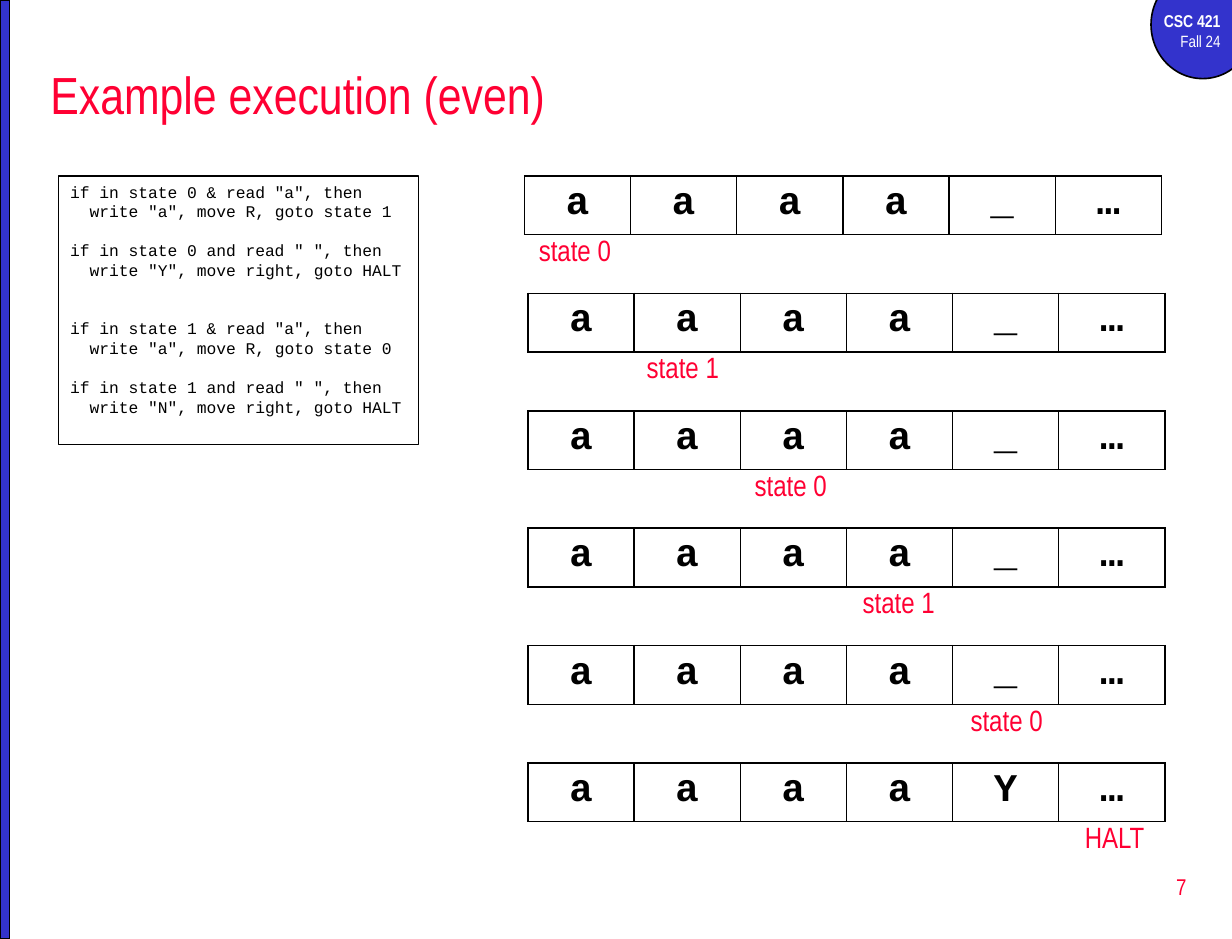
from dataclasses import dataclass
from lxml.etree import SubElement
from pptx import Presentation
from pptx.dml.color import RGBColor
from pptx.enum.shapes import MSO_SHAPE
from pptx.enum.text import MSO_ANCHOR, PP_ALIGN
from pptx.oxml.ns import qn
from pptx.util import Inches, Pt


@dataclass(frozen=True)
class Theme:
    blue: RGBColor = RGBColor(0x33, 0x33, 0xCC)
    red: RGBColor = RGBColor(0xFF, 0x00, 0x33)
    black: RGBColor = RGBColor(0, 0, 0)
    white: RGBColor = RGBColor(0xFF, 0xFF, 0xFF)
    sans: str = "Arial Narrow"
    mono: str = "Courier New"
    title: float = 32
    tape: float = 24
    state: float = 18
    number: float = 14
    course: float = 10.5
    small: float = 10


T = Theme()


def write(tf, text, size, color=T.red, font=T.sans, bold=False,
          align=PP_ALIGN.LEFT, first=True):
    """Fill the first paragraph of tf, or add one, and return it."""
    p = tf.paragraphs[0] if first else tf.add_paragraph()
    p.alignment = align
    r = p.add_run()
    r.text = text
    r.font.size, r.font.name, r.font.bold = Pt(size), font, bold
    r.font.color.rgb = color
    return p


def add_box(kind, x, y, w, h, fill=None, line=1):
    sp = s.shapes.add_shape(kind, Inches(x), Inches(y), Inches(w), Inches(h))
    sp.shadow.inherit = False
    if fill is None:
        sp.fill.background()
    else:
        sp.fill.solid()
        sp.fill.fore_color.rgb = fill
    sp.line.color.rgb, sp.line.width = T.black, Pt(line)
    return sp


prs = Presentation()
prs.slide_width, prs.slide_height = Inches(10.5), Inches(8)
s = prs.slides.add_slide(prs.slide_layouts[5])

# Corner badge and side bar
add_box(MSO_SHAPE.OVAL, 9.81, -0.25, 0.88, 0.92, T.blue)
tf = s.shapes.add_textbox(Inches(9.67), Inches(0.04), Inches(0.83), Inches(0.46)).text_frame
tf.word_wrap = True
write(tf, "CSC 421", T.course, T.white, bold=True, align=PP_ALIGN.RIGHT)
write(tf, "Fall 24", T.small, T.white, align=PP_ALIGN.RIGHT, first=False)
add_box(MSO_SHAPE.RECTANGLE, 0, 0, 0.08, 8, T.blue)

# Title and slide number
title = s.shapes.title
title.left, title.top, title.width, title.height = map(Inches, (0.33, 0.42, 9.92, 0.75))
title.text_frame.vertical_anchor = MSO_ANCHOR.MIDDLE
write(title.text_frame, "Example execution (even)", T.title)
tf = s.shapes.add_textbox(Inches(8.02), Inches(7.29), Inches(2.19), Inches(0.53)).text_frame
tf.word_wrap = True
tf.vertical_anchor = MSO_ANCHOR.MIDDLE
write(tf, "7", T.number, align=PP_ALIGN.RIGHT)

# Rules of the machine: condition, action, blank lines before
rules = [
    ('if in state 0 & read "a", then', 'write "a", move R, goto state 1', 0),
    ('if in state 0 and read " ", then', 'write "Y", move right, goto HALT', 1),
    ('if in state 1 & read "a", then', 'write "a", move R, goto state 0', 2),
    ('if in state 1 and read " ", then', 'write "N", move right, goto HALT', 1),
]
LEADING = Pt(12)
tf = add_box(MSO_SHAPE.RECTANGLE, 0.5, 1.5, 3.07, 2.29, line=0.75).text_frame
tf.word_wrap = True
tf.vertical_anchor = MSO_ANCHOR.TOP
for i, (condition, action, gap) in enumerate(rules):
    p = write(tf, condition, T.small, T.black, T.mono, first=i == 0)
    p.line_spacing, p.space_before = LEADING, gap * LEADING
    p = write(tf, action, T.small, T.black, T.mono, first=False)
    p.line_spacing = LEADING
    p._p.get_or_add_pPr().set("marL", str(Pt(12)))  # two characters wide

# One tape per step, with the state under the cell being read
steps = [("aaaa_…", "state 0"), ("aaaa_…", "state 1"), ("aaaa_…", "state 0"),
         ("aaaa_…", "state 1"), ("aaaa_…", "state 0"), ("aaaaY…", "HALT")]
TOP, PITCH, COL, ROW = 1.5, 1, 0.905, 0.42
for i, (tape, state) in enumerate(steps):
    y = TOP + i * PITCH
    x = 4.5 if i else 4.47
    table = s.shapes.add_table(1, len(tape), Inches(x), Inches(y),
                               Inches(COL * len(tape)), Inches(ROW)).table
    table.first_row = table.horz_banding = False
    for cell, symbol in zip(table.iter_cells(), tape):
        write(cell.text_frame, symbol, T.tape, T.black, T.mono, True, PP_ALIGN.CENTER)
        tcPr = cell._tc.get_or_add_tcPr()
        for side in ("a:lnL", "a:lnR", "a:lnT", "a:lnB"):
            ln = SubElement(tcPr, qn(side), w=str(Pt(1)))
            SubElement(SubElement(ln, qn("a:solidFill")), qn("a:srgbClr"), val=str(T.black))
        cell.fill.background()

    tf = s.shapes.add_textbox(Inches(4.47 + i * 0.92), Inches(y + 0.43),
                              Inches(0.86), Inches(0.4)).text_frame
    tf.word_wrap = True
    write(tf, state, T.state, align=PP_ALIGN.CENTER)

prs.save("out.pptx")
